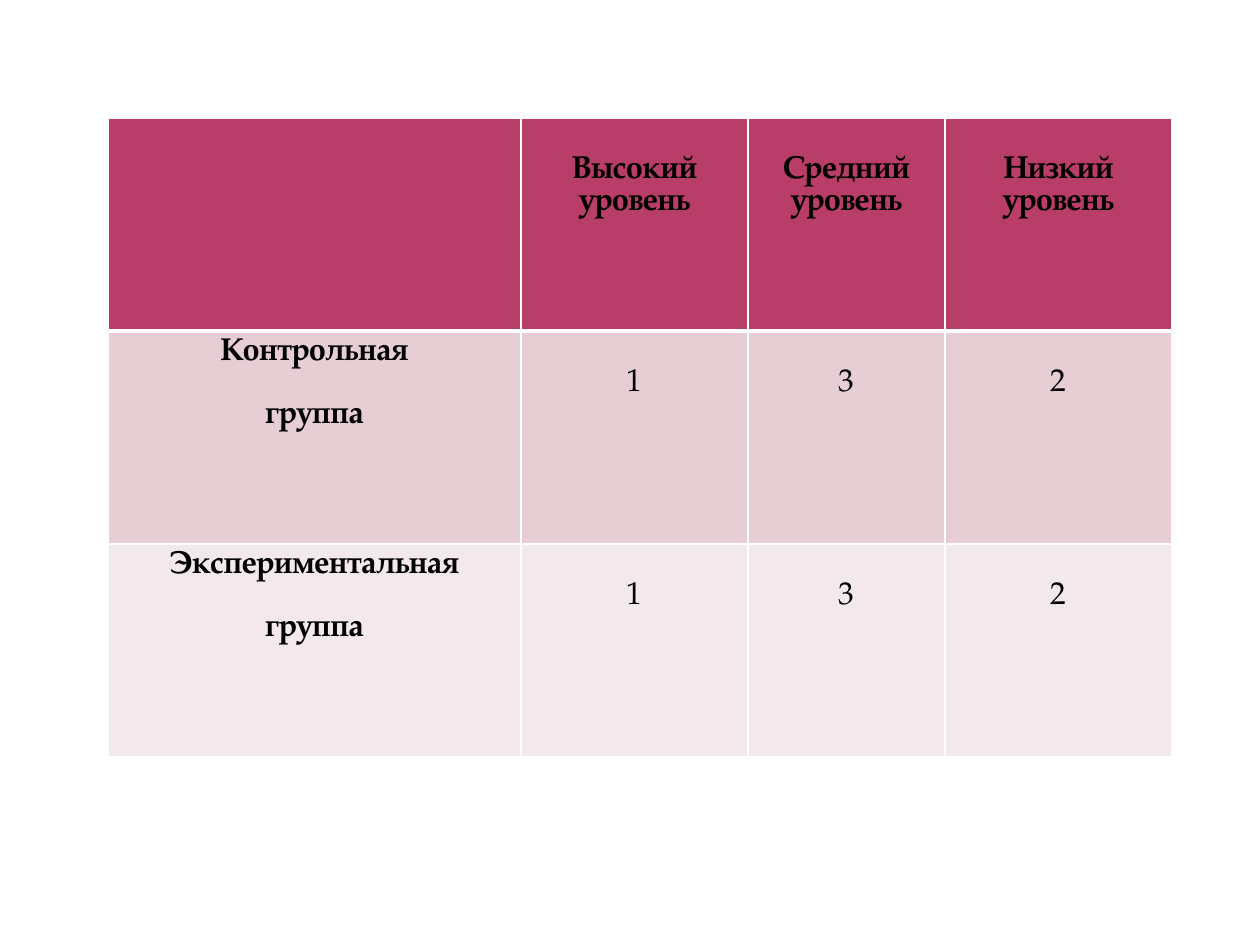
from lxml import etree
from pptx import Presentation
from pptx.dml.color import RGBColor
from pptx.enum.text import PP_ALIGN as Align
from pptx.oxml.ns import qn
from pptx.util import Pt

# Content: every cell is a list of lines
ROWS = [
    [[], ["Высокий", "уровень"], ["Средний", "уровень"], ["Низкий", "уровень"]],
    [["Контрольная", "группа"], ["1"], ["3"], ["2"]],
    [["Экспериментальная", "группа"], ["1"], ["3"], ["2"]],
]
COLORS = {"text": "000000", "border": "FFFFFF"}
ROW_FILLS = ["B83D68", "E6CED4", "F3E8EB"]
FONT = "TeX Gyre Pagella"
LINE = Pt(18)

# Layout in px
PX = 914400 // 126
LEFT, TOP = 108, 118
COL_WIDTHS = [413, 227, 197, 227]
ROW_HEIGHT = 213
PAD = 6


def add_borders(cell, widths):
    """Draw the cell edges; widths maps an edge letter to points."""
    tc_pr = cell._tc.get_or_add_tcPr()
    for i, edge in enumerate("LRTB"):
        ln = etree.Element(qn(f"a:ln{edge}"), w=str(Pt(widths[edge])))
        fill = etree.SubElement(ln, qn("a:solidFill"))
        etree.SubElement(fill, qn("a:srgbClr"), val=COLORS["border"])
        tc_pr.insert(i, ln)


def write_lines(cell, lines, gap):
    tf = cell.text_frame
    tf.text = "\n".join(lines)
    for i, p in enumerate(tf.paragraphs):
        p.alignment = Align.CENTER
        p.line_spacing = LINE
        p.space_before = gap if i else 0
        p.font.size = Pt(18)
        for r in p.runs:
            r.font.name = FONT
            r.font.size = Pt(18)
            r.font.bold = not r.text.isdigit()
            r.font.color.rgb = RGBColor.from_string(COLORS["text"])


prs = Presentation()
prs.slide_width, prs.slide_height = 1260 * PX, 945 * PX
slide = prs.slides.add_slide(prs.slide_layouts[6])

# Table grid
table = slide.shapes.add_table(
    len(ROWS), len(COL_WIDTHS), LEFT * PX, TOP * PX,
    sum(COL_WIDTHS) * PX, len(ROWS) * ROW_HEIGHT * PX).table
for column, width in zip(table.columns, COL_WIDTHS):
    column.width = width * PX

# Cells: row labels start at the top, all others one line lower
for i, row in enumerate(ROWS):
    table.rows[i].height = ROW_HEIGHT * PX
    for j, lines in enumerate(row):
        cell = table.cell(i, j)
        is_label = j == 0
        cell.margin_top = PAD * PX + (0 if is_label else LINE)
        cell.fill.solid()
        cell.fill.fore_color.rgb = RGBColor.from_string(ROW_FILLS[i])
        add_borders(cell, {"L": 1, "R": 1, "T": 3 if i == 1 else 1,
                           "B": 3 if i == 0 else 1})
        write_lines(cell, lines, LINE if is_label else 0)

prs.save("out.pptx")
